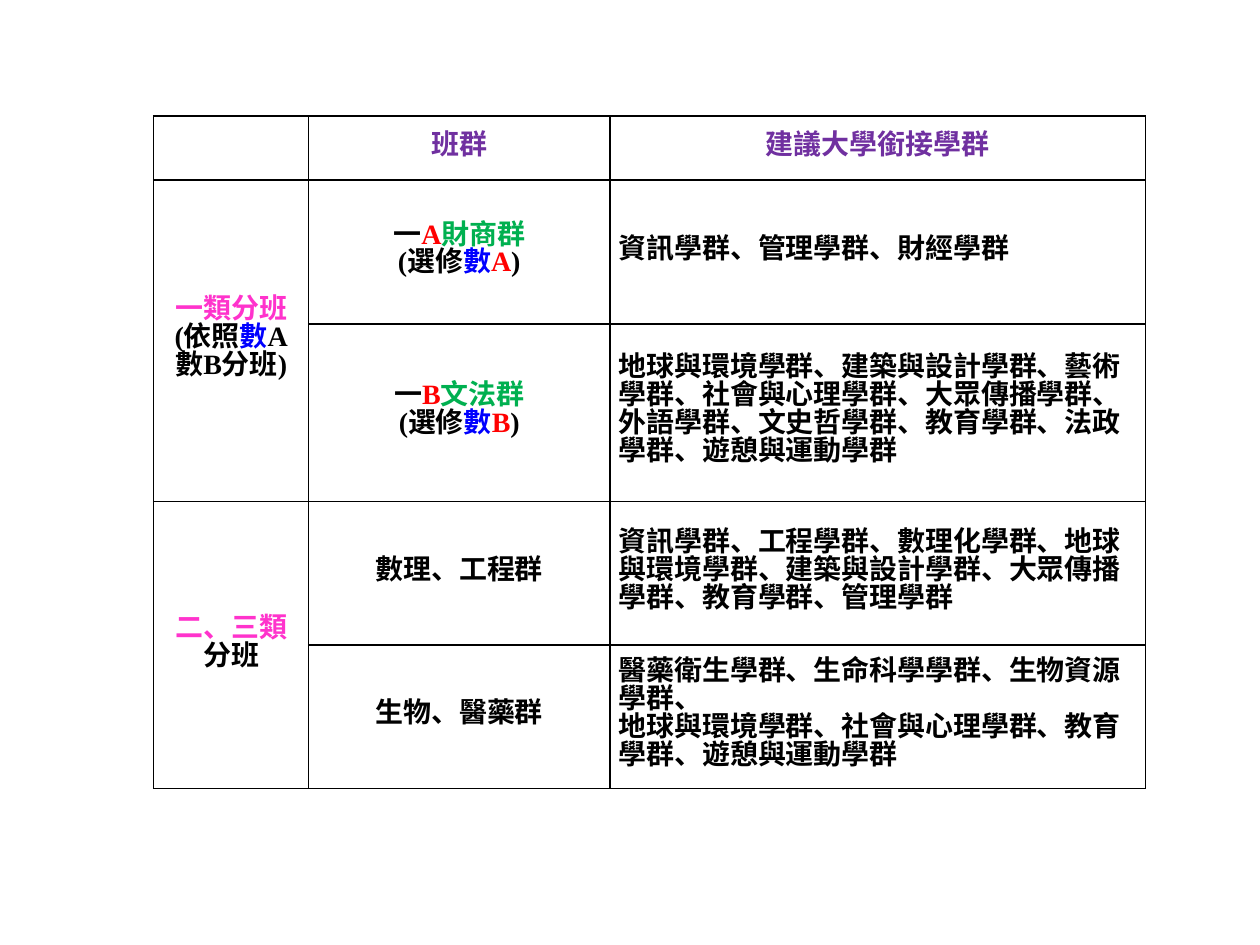
import pptx
import pptx.util
import pptx.dml.color
import pptx.enum.text
import pptx.oxml
import pptx.oxml.ns
import lxml.etree

Inches = pptx.util.Inches
Pt = pptx.util.Pt
RGBColor = pptx.dml.color.RGBColor
PP_ALIGN = pptx.enum.text.PP_ALIGN

BLACK = RGBColor(0x00, 0x00, 0x00)
PURPLE = RGBColor(0x70, 0x30, 0xA0)
PINK = RGBColor(0xFF, 0x33, 0xCC)
BLUE = RGBColor(0x00, 0x00, 0xFF)
RED = RGBColor(0xFF, 0x00, 0x00)
GREEN = RGBColor(0x00, 0xB0, 0x50)
FONT = "Times New Roman"

COLUMN_WIDTHS = [1.23, 2.39, 4.25]
ROW_HEIGHTS = [0.51, 1.14, 1.41, 1.14, 1.14]


def add_borders(cell):
    properties = cell._tc.get_or_add_tcPr()
    for index, side in enumerate(("lnL", "lnR", "lnT", "lnB")):
        line = lxml.etree.Element(pptx.oxml.ns.qn("a:" + side), w=str(Pt(1)))
        fill = lxml.etree.SubElement(line, pptx.oxml.ns.qn("a:solidFill"))
        lxml.etree.SubElement(fill, pptx.oxml.ns.qn("a:srgbClr"), val=str(BLACK))
        properties.insert(index, line)


def elective_group(letter, name):
    return [
        [("一", BLACK), (letter, RED), (name, GREEN)],
        [("(選修", BLACK), ("數", BLUE), (letter, RED), (")", BLACK)],
    ]


contents = {
    (0, 1): [[("班群", PURPLE)]],
    (0, 2): [[("建議大學銜接學群", PURPLE)]],
    (1, 0): [
        [("一類分班", PINK)],
        [("(依照", BLACK), ("數", BLUE), ("A", BLACK)],
        [("數B分班)", BLACK)],
    ],
    (1, 1): elective_group("A", "財商群"),
    (1, 2): [[("資訊學群、管理學群、財經學群", BLACK)]],
    (2, 1): elective_group("B", "文法群"),
    (2, 2): [[("地球與環境學群、建築與設計學群、藝術學群、社會與心理學群、大眾傳播學群、"
               "外語學群、文史哲學群、教育學群、法政學群、遊憩與運動學群", BLACK)]],
    (3, 0): [[("二、三類", PINK), ("分班", BLACK)]],
    (3, 1): [[("數理、工程群", BLACK)]],
    (3, 2): [[("資訊學群、工程學群、數理化學群、地球與環境學群、建築與設計學群、"
               "大眾傳播學群、教育學群、管理學群", BLACK)]],
    (4, 1): [[("生物、醫藥群", BLACK)]],
    (4, 2): [
        [("醫藥衛生學群、生命科學學群、生物資源學群、", BLACK)],
        [("地球與環境學群、社會與心理學群、教育學群、遊憩與運動學群", BLACK)],
    ],
}

deck = pptx.Presentation()
deck.slide_width = Inches(10)
deck.slide_height = Inches(7.5)
page = deck.slides.add_slide(deck.slide_layouts[6])

table = page.shapes.add_table(
    len(ROW_HEIGHTS), len(COLUMN_WIDTHS), Inches(1.22), Inches(0.92),
    Inches(sum(COLUMN_WIDTHS)), Inches(sum(ROW_HEIGHTS))).table
table.first_row = False
table.horz_banding = False
for column, width in zip(table.columns, COLUMN_WIDTHS):
    column.width = Inches(width)
for row, height in zip(table.rows, ROW_HEIGHTS):
    row.height = Inches(height)
for top in (1, 3):
    table.cell(top, 0).merge(table.cell(top + 1, 0))

for cell in table.iter_cells():
    cell.fill.background()
    cell.margin_left = cell.margin_right = Inches(0.07)
    cell.margin_top = cell.margin_bottom = 0
    cell.vertical_anchor = pptx.enum.text.MSO_ANCHOR.MIDDLE
    add_borders(cell)

for (row, column), lines in contents.items():
    frame = table.cell(row, column).text_frame
    frame.text = "\n".join("" for line in lines)
    for para, line in zip(frame.paragraphs, lines):
        centred = row == 0 or column < 2
        para.alignment = PP_ALIGN.CENTER if centred else PP_ALIGN.LEFT
        para.line_spacing = Pt(16)
        for text, color in line:
            span = para.add_run()
            span.text = text
            span.font.name = FONT
            span.font.size = Pt(16)
            span.font.bold = True
            span.font.color.rgb = color

deck.save("out.pptx")
